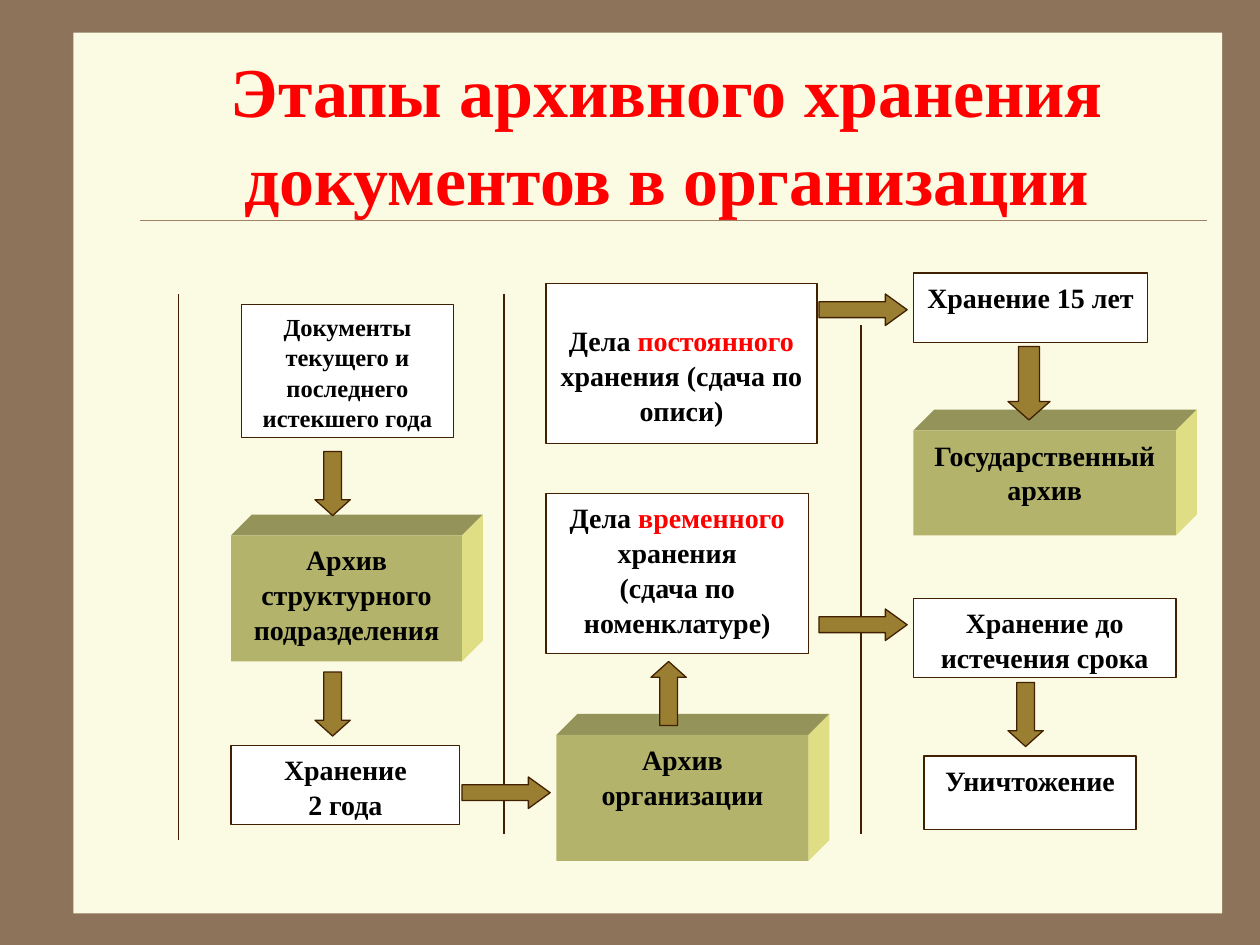
from lxml import etree
from pptx import Presentation
from pptx import util as u
from pptx.dml.color import RGBColor
from pptx.enum import shapes, text
from pptx.oxml.ns import qn

COLORS = {"frame": "8C735A", "panel": "FBFAE2", "rule": "A08366", "line": "402000",
          "arrow": "9A7F32", "front": "B3B36B", "top": "94935A", "side": "DFDE84",
          "box": "FFFFFF", "ink": "000000", "accent": "FF0000"}
FONT = "Times New Roman"
COLS, ROWS = 120, 90
WIDTH, HEIGHT = u.Inches(10), u.Inches(7.5)
DEPTH = 2
SPACING = 1.04
KINDS = shapes.MSO_SHAPE
DOWN, UP, RIGHT = KINDS.DOWN_ARROW, KINDS.UP_ARROW, KINDS.RIGHT_ARROW
ARROWS = {DOWN: (3.36, 6.1, 0.45), UP: (3.36, 6.1, 0.45), RIGHT: (8.4, 3, 0.69)}


def rgb(name):
    """Return the palette colour."""
    return RGBColor.from_string(COLORS[name])


def grid(x, y):
    """Turn columns and rows into slide lengths."""
    return int(WIDTH * x / COLS), int(HEIGHT * y / ROWS)


def place(region, x, y, w, h):
    """Turn a cell within a region into left, top, width and height."""
    return *grid(region[0] + x, region[1] + y), *grid(w, h)


def paint(sp, fill, line=None):
    """Give a shape its flat fill and outline."""
    sp.shadow.inherit = False
    sp.fill.solid()
    sp.fill.fore_color.rgb = rgb(fill)
    if line:
        sp.line.color.rgb = rgb(line)
        sp.line.width = u.Pt(0.75)
    else:
        sp.line.fill.background()


def write(tf, paragraphs, size, anchor=text.MSO_ANCHOR.TOP):
    """Write centred bold paragraphs of (text, colour) runs."""
    tf.word_wrap = True
    tf.auto_size = text.MSO_AUTO_SIZE.NONE
    tf.vertical_anchor = anchor
    for i, runs in enumerate(paragraphs):
        p = tf.paragraphs[0] if i == 0 else tf.add_paragraph()
        p.alignment = text.PP_ALIGN.CENTER
        p.line_spacing = SPACING
        for words, color in runs:
            r = p.add_run()
            r.text = words
            r.font.name, r.font.size, r.font.bold = FONT, u.Pt(size), True
            r.font.color.rgb = rgb(color)


def add_line(sl, start, end, color, width):
    """Draw a straight line between two grid points."""
    ln = sl.shapes.add_connector(shapes.MSO_CONNECTOR.STRAIGHT, *grid(*start), *grid(*end))
    ln.line.color.rgb = rgb(color)
    ln.line.width = u.Pt(width)
    etree.SubElement(ln._element.spPr, qn("a:effectLst"))


def add_box(sl, region, cell, *paragraphs, size=16, inset=0.05):
    """Draw an outlined white box with its text."""
    sp = sl.shapes.add_shape(KINDS.RECTANGLE, *place(region, *cell))
    paint(sp, "box", "line")
    sp.text_frame.margin_top = u.Inches(inset)
    write(sp.text_frame, paragraphs, size)


def add_archive(sl, region, cell, label):
    """Draw an archive block: front face with text, top face and side face."""
    left, top, w, h = place(region, *cell)
    dx, dy = grid(DEPTH, DEPTH)
    right, bottom = left + w, top + h
    faces = {"top": [(left, top), (left + dx, top - dy), (right + dx, top - dy), (right, top)],
             "side": [(right, top), (right + dx, top - dy), (right + dx, bottom - dy),
                      (right, bottom)]}
    for color, points in faces.items():
        fb = sl.shapes.build_freeform(*points[0])
        fb.add_line_segments(points[1:], close=True)
        paint(fb.convert_to_shape(), color)
    sp = sl.shapes.add_shape(KINDS.RECTANGLE, left, top, w, h)
    paint(sp, "front")
    write(sp.text_frame, [[(label, "ink")]], 16)


def add_arrow(sl, region, kind, x, y, size=None):
    """Draw a block arrow at a grid point of a region."""
    w, h, head = size or ARROWS[kind]
    sp = sl.shapes.add_shape(kind, *place(region, x, y, w, h))
    sp.adjustments[0], sp.adjustments[1] = 0.5, head
    paint(sp, "arrow", "line")


def draw_frame(sl, region):
    """Draw the background, the panel and the rule under the title."""
    sl.background.fill.solid()
    sl.background.fill.fore_color.rgb = rgb("frame")
    panel = sl.shapes.add_shape(KINDS.RECTANGLE, *place((0, 0), *region))
    paint(panel, "panel")
    sl.shapes._spTree.insert(2, panel._element)
    add_line(sl, (13.3, 21), (115, 21), "rule", 0.25)


def draw_title(sl, region):
    """Place the slide title."""
    title = sl.shapes.title
    title.left, title.top, title.width, title.height = place((0, 0), *region)
    write(title.text_frame, [[("Этапы архивного хранения документов в организации", "accent")]],
          40, text.MSO_ANCHOR.MIDDLE)


def draw_department(sl, region):
    """Draw the stages within a department."""
    add_box(sl, region, (6, 3, 20.2, 12.7),
            [("Документы текущего и последнего истекшего года", "ink")], size=14)
    add_archive(sl, region, (5, 25, 22, 12), "Архив структурного подразделения")
    add_box(sl, region, (5, 45, 21.8, 7.5), [("Хранение", "ink")], [("2 года", "ink")])
    for y in (17, 38):
        add_arrow(sl, region, DOWN, 13, y)
    add_arrow(sl, region, RIGHT, 27, 48)


def draw_organization(sl, region):
    """Draw the organization archive and its two kinds of files."""
    add_box(sl, region, (4, 1, 25.8, 15.25),
            [("Дела ", "ink"), ("постоянного ", "accent"), ("хранения (сдача по описи)", "ink")],
            inset=0.31)
    add_box(sl, region, (4, 21, 25, 15.25),
            [("Дела ", "ink"), ("временного ", "accent"), ("хранения", "ink")],
            [("(сдача по номенклатуре)", "ink")])
    add_archive(sl, region, (5, 44, 24, 12), "Архив организации")
    add_arrow(sl, region, UP, 14, 37)
    for y in (2, 32):
        add_arrow(sl, region, RIGHT, 30, y)


def draw_outcome(sl, region):
    """Draw the final stages: state archive or destruction."""
    add_box(sl, region, (5, 0, 22.3, 6.6), [("Хранение 15 лет", "ink")])
    add_archive(sl, region, (5, 15, 25, 10), "Государственный архив")
    add_box(sl, region, (5, 31, 25, 7.5), [("Хранение до истечения срока", "ink")])
    add_box(sl, region, (6, 46, 20.2, 7), [("Уничтожение", "ink")])
    add_arrow(sl, region, DOWN, 14, 7, (4, 7, 0.44))
    add_arrow(sl, region, DOWN, 14, 39)


def main():
    """Build and save the slide."""
    prs = Presentation()
    prs.slide_width, prs.slide_height = WIDTH, HEIGHT
    sl = prs.slides.add_slide(prs.slide_layouts[5])
    draw_frame(sl, (7, 3.1, 109.4, 83.9))
    draw_title(sl, (15, 4, 97, 17.1))
    columns = [(17, 28, 80, draw_department), (48, 28, 79.4, draw_organization),
               (82, 31, 79.4, draw_outcome)]
    for x, top, bottom, _ in columns:
        add_line(sl, (x, top), (x, bottom), "line", 0.75)
    for x, _, _, draw in columns:
        draw(sl, (x, 26))
    prs.save("out.pptx")


if __name__ == "__main__":
    main()
